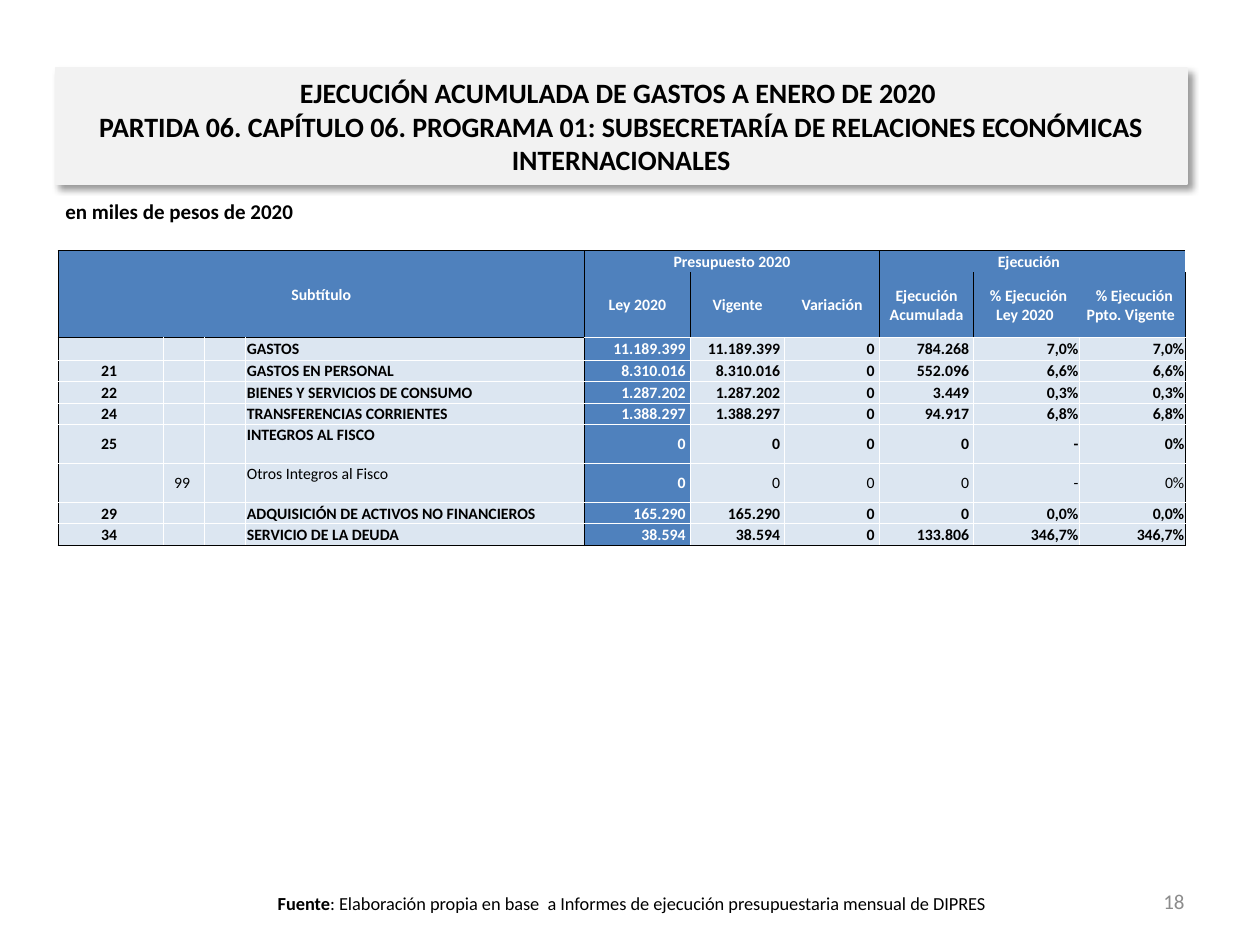
"""Build the budget execution slide with its title, table, source and page number."""
import lxml.etree
import pptx
import pptx.dml.color
import pptx.enum.shapes
import pptx.enum.text
import pptx.oxml.ns
import pptx.util

Inches = pptx.util.Inches
Align = pptx.enum.text.PP_ALIGN
Anchor = pptx.enum.text.MSO_ANCHOR
qn = pptx.oxml.ns.qn
BLACK, WHITE, BLUE, PALE, GRAY = "000000", "FFFFFF", "4F81BD", "DCE6F1", "F2F2F2"


def color(value):
    return pptx.dml.color.RGBColor.from_string(value)


def add_run(paragraph, text, size, bold=False, ink=BLACK):
    run = paragraph.add_run()
    run.text = text
    run.font.name = "Calibri"
    run.font.size = pptx.util.Pt(size)
    run.font.bold = bold
    run.font.color.rgb = color(ink)


presentation = pptx.Presentation()
presentation.slide_width = Inches(10)
presentation.slide_height = Inches(7.5)
slide = presentation.slides.add_slide(presentation.slide_layouts[6])

captions = [
    ((0.42, 7.05, 9.19, 0.24), Anchor.MIDDLE, Align.CENTER, 10.5, BLACK,
     [("Fuente", True),
      (": Elaboración propia en base  a Informes de ejecución presupuestaria mensual de DIPRES", False)]),
    ((7.17, 6.95, 2.33, 0.4), Anchor.MIDDLE, Align.RIGHT, 12, "8C8C8C", [("18", False)]),
    ((0.42, 1.53, 9, 0.37), Anchor.TOP, Align.LEFT, 12, BLACK, [("en miles de pesos de 2020", True)]),
]
for box, anchor, alignment, size, ink, runs in captions:
    frame = slide.shapes.add_textbox(*map(Inches, box)).text_frame
    frame.word_wrap = True
    frame.vertical_anchor = anchor
    paragraph = frame.paragraphs[0]
    paragraph.alignment = alignment
    for text, bold in runs:
        add_run(paragraph, text, size, bold, ink)

title = slide.shapes.add_shape(
    pptx.enum.shapes.MSO_SHAPE.RECTANGLE, Inches(0.44), Inches(0.54), Inches(8.98), Inches(0.92))
title.fill.solid()
title.fill.fore_color.rgb = color(GRAY)
title.line.color.rgb = color(GRAY)
title.line.width = pptx.util.Pt(0.75)
title.shadow.inherit = False
effects = title.element.spPr.find(qn("a:effectLst"))
shadow = lxml.etree.SubElement(
    effects, qn("a:outerShdw"), blurRad=str(pptx.util.Pt(4)), dist=str(pptx.util.Pt(3)),
    dir="2700000", algn="tl", rotWithShape="0")
shadow_color = lxml.etree.SubElement(shadow, qn("a:srgbClr"), val=BLACK)
lxml.etree.SubElement(shadow_color, qn("a:alpha"), val="40000")
frame = title.text_frame
frame.word_wrap = True
frame.vertical_anchor = Anchor.MIDDLE
frame.margin_left = frame.margin_right = Inches(0.11)
frame.margin_top = frame.margin_bottom = Inches(0.05)
paragraph = frame.paragraphs[0]
paragraph.alignment = Align.CENTER
add_run(paragraph, "EJECUCIÓN ACUMULADA DE GASTOS A ENERO DE 2020 ", 16, True)
paragraph.add_line_break()
add_run(paragraph, "PARTIDA 06. CAPÍTULO 06. PROGRAMA 01: SUBSECRETARÍA DE RELACIONES "
        "ECONÓMICAS INTERNACIONALES", 16, True)

rows = [
    ["Subtítulo", "", "", "", "Presupuesto 2020", "", "", "Ejecución  ", "", ""],
    ["", "", "", "", "Ley 2020", "Vigente", "Variación", "Ejecución Acumulada",
     " % Ejecución Ley 2020 ", " % Ejecución Ppto. Vigente "],
    ["", "", "", "GASTOS", "11.189.399 ", "11.189.399 ", "0 ", "784.268 ", "7,0%", "7,0%"],
    ["21 ", "", "", "GASTOS EN PERSONAL", "8.310.016 ", "8.310.016 ", "0 ", "552.096 ", "6,6%", "6,6%"],
    ["22 ", "", "", "BIENES Y SERVICIOS DE CONSUMO", "1.287.202 ", "1.287.202 ", "0 ", "3.449 ", "0,3%", "0,3%"],
    ["24 ", "", "", "TRANSFERENCIAS CORRIENTES", "1.388.297 ", "1.388.297 ", "0 ", "94.917 ", "6,8%", "6,8%"],
    ["25 ", "", "", "INTEGROS AL FISCO", "0 ", "0 ", "0 ", "0 ", "-", "0%"],
    ["", "99 ", "", "Otros Integros al Fisco", "0 ", "0 ", "0 ", "0 ", "-", "0%"],
    ["29 ", "", "", "ADQUISICIÓN DE ACTIVOS NO FINANCIEROS", "165.290 ", "165.290 ", "0 ", "0 ", "0,0%", "0,0%"],
    ["34 ", "", "", "SERVICIO DE LA DEUDA", "38.594 ", "38.594 ", "0 ", "133.806 ", "346,7%", "346,7%"],
]
column_widths = [0.84, 0.32, 0.33, 2.69, 0.84, 0.75, 0.75, 0.75, 0.84, 0.84]
row_heights = [0.17, 0.52, 0.18, 0.17, 0.17, 0.17, 0.31, 0.31, 0.17, 0.17]
tall_rows = (6, 7)
detail_row = 7
last_row = len(rows) - 1

table_shape = slide.shapes.add_table(
    len(rows), len(column_widths), Inches(0.46), Inches(1.99),
    Inches(sum(column_widths)), Inches(sum(row_heights)))
table = table_shape.table
table.first_row = table.horz_banding = False
style = table_shape.element.find(".//" + qn("a:tableStyleId"))
style.text = "{2D5ABB26-0587-4C30-8999-92F81FD0307C}"
for column, width in zip(table.columns, column_widths):
    column.width = Inches(width)
for row, height in zip(table.rows, row_heights):
    row.height = Inches(height)
table.cell(0, 0).merge(table.cell(1, 3))
table.cell(0, 4).merge(table.cell(0, 6))
table.cell(0, 7).merge(table.cell(0, 9))

for r, values in enumerate(rows):
    header = r < 2
    grid = None if header else WHITE
    for c, text in enumerate(values):
        cell = table.cell(r, c)
        cell.margin_left = cell.margin_right = cell.margin_top = Inches(0.01)
        cell.margin_bottom = 0
        cell.vertical_anchor = Anchor.MIDDLE
        if r == 0 and c >= 4:
            cell.vertical_anchor = Anchor.BOTTOM
        elif r in tall_rows and c == 3:
            cell.vertical_anchor = Anchor.TOP

        header_edge = BLACK if c < 4 else WHITE
        borders = {
            "a:lnL": BLACK if c in (0, 4) or header and c == 7 else grid,
            "a:lnR": BLACK if c in (3, 9) or header and c == 6 else grid,
            "a:lnT": BLACK if r == 0 else header_edge if r == 2 else grid,
            "a:lnB": BLACK if r == last_row else header_edge if r == 1 else grid,
        }
        properties = cell._tc.get_or_add_tcPr()
        for tag, ink in borders.items():
            if ink:
                line = lxml.etree.SubElement(properties, qn(tag), w=str(pptx.util.Pt(0.5)))
                fill = lxml.etree.SubElement(line, qn("a:solidFill"))
                lxml.etree.SubElement(fill, qn("a:srgbClr"), val=ink)

        highlighted = header or c == 4
        cell.fill.solid()
        cell.fill.fore_color.rgb = color(BLUE if highlighted else PALE)
        paragraph = cell.text_frame.paragraphs[0]
        if header or c < 3:
            paragraph.alignment = Align.CENTER
        else:
            paragraph.alignment = Align.LEFT if c == 3 else Align.RIGHT
        if text:
            add_run(paragraph, text, 9, highlighted or r != detail_row, WHITE if highlighted else BLACK)
        else:
            lxml.etree.SubElement(paragraph._p, qn("a:endParaRPr"), sz="900")

presentation.save("out.pptx")
